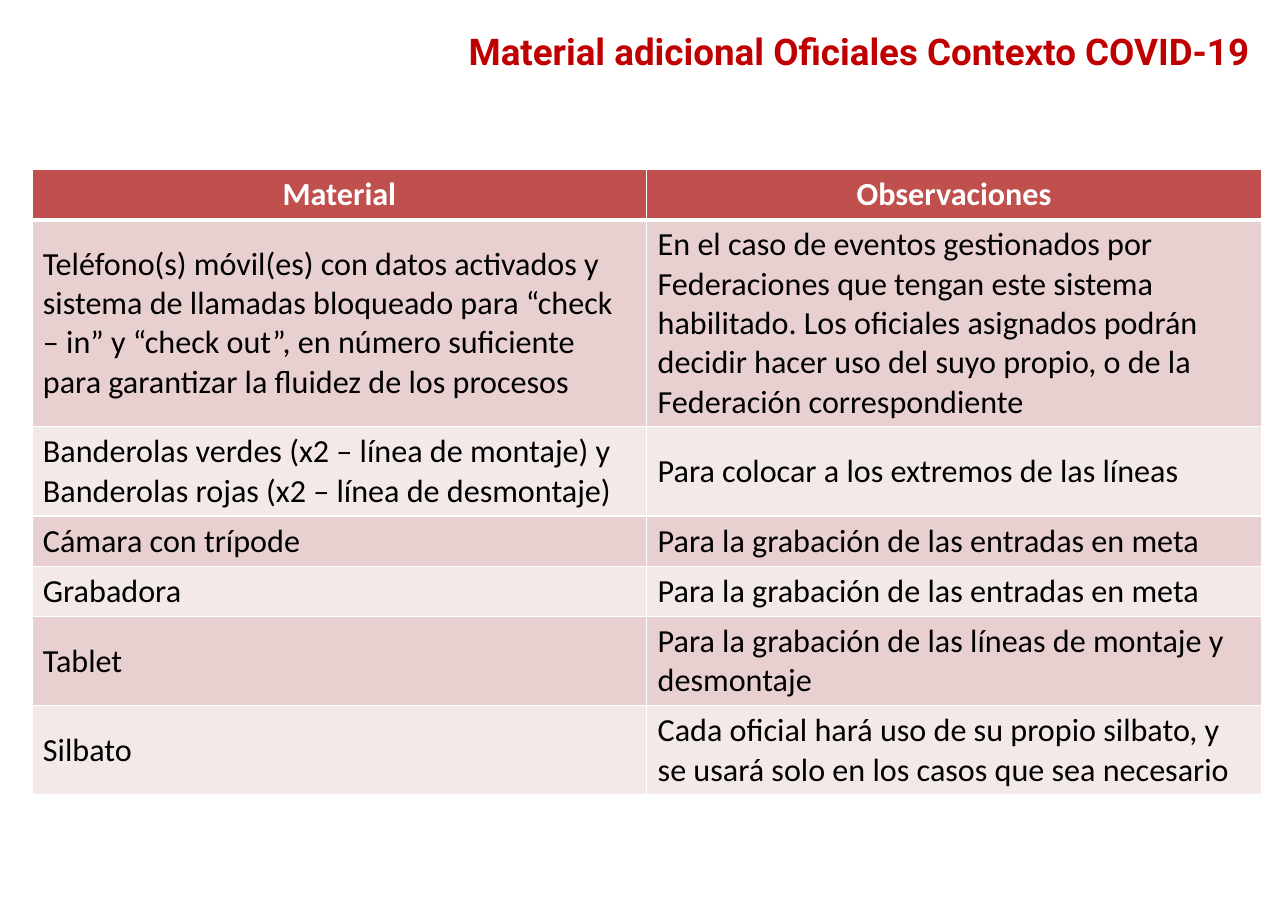
import pptx
import pptx.dml.color
import pptx.enum.text
import pptx.oxml
import pptx.oxml.ns
import pptx.util

COLORS = {
    "title": "C00000",
    "header": "C0504D",
    "band_dark": "E8D0D0",
    "band_light": "F4E9E9",
    "white": "FFFFFF",
    "black": "000000",
}
ALIGN = pptx.enum.text.PP_ALIGN
MIDDLE = pptx.enum.text.MSO_ANCHOR.MIDDLE
LINE_HEIGHT = 4.3
CELL_PADDING = 1.21

HEADINGS = ("Material", "Observaciones")
MATERIALS = [
    (5, "Teléfono(s) móvil(es) con datos activados y sistema de llamadas bloqueado para "
        "“check – in” y “check out”, en número suficiente para garantizar la fluidez de "
        "los procesos",
     "En el caso de eventos gestionados por Federaciones que tengan este sistema "
     "habilitado. Los oficiales asignados podrán decidir hacer uso del suyo propio, o de "
     "la Federación correspondiente"),
    (2, "Banderolas verdes (x2 – línea de montaje) y Banderolas rojas (x2 – línea de desmontaje)",
     "Para colocar a los extremos de las líneas"),
    (1, "Cámara con trípode", "Para la grabación de las entradas en meta"),
    (1, "Grabadora", "Para la grabación de las entradas en meta"),
    (2, "Tablet", "Para la grabación de las líneas de montaje y desmontaje"),
    (2, "Silbato",
     "Cada oficial hará uso de su propio silbato, y se usará solo en los casos que sea necesario"),
]


def rgb(name):
    """Return the named palette colour."""
    return pptx.dml.color.RGBColor.from_string(COLORS[name])


def write_text(text_frame, text, font="Calibri", size=21, color="black", bold=False,
               align=ALIGN.LEFT):
    """Write one formatted paragraph into a text frame."""
    text_frame.word_wrap = True
    paragraph = text_frame.paragraphs[0]
    paragraph.alignment = align
    run = paragraph.add_run()
    run.text = text
    run.font.name = font
    run.font.size = pptx.util.Pt(size)
    run.font.bold = bold
    run.font.color.rgb = rgb(color)


class MaterialSlide:
    """Draw styled elements on one slide, with lengths in percent of its size."""

    def __init__(self, presentation):
        """Add a blank slide to the presentation."""
        self.width = presentation.slide_width
        self.height = presentation.slide_height
        self.slide = presentation.slides.add_slide(presentation.slide_layouts[6])

    def across(self, percent):
        """Convert a percentage of the slide width."""
        return round(self.width * percent / 100)

    def down(self, percent):
        """Convert a percentage of the slide height."""
        return round(self.height * percent / 100)

    def title(self, text, left, top, width, height):
        """Add the right-aligned title."""
        shape = self.slide.shapes.add_textbox(
            self.across(left), self.down(top), self.across(width), self.down(height))
        frame = shape.text_frame
        frame.vertical_anchor = MIDDLE
        frame.margin_left = frame.margin_right = pptx.util.Inches(0.11)
        frame.margin_top = frame.margin_bottom = pptx.util.Inches(0.06)
        write_text(frame, text, font="Roboto", size=24, color="title", bold=True,
                   align=ALIGN.RIGHT)

    def borders(self, cell, top, bottom):
        """Give a cell white borders of the given top and bottom widths."""
        properties = cell._tc.get_or_add_tcPr()
        for index, (side, points) in enumerate(
                (("L", 1), ("R", 1), ("T", top), ("B", bottom))):
            properties.insert(index, pptx.oxml.parse_xml(
                f'<a:ln{side} {pptx.oxml.ns.nsdecls("a")} w="{pptx.util.Pt(points)}">'
                f'<a:solidFill><a:srgbClr val="{COLORS["white"]}"/></a:solidFill>'
                f'</a:ln{side}>'))

    def cell(self, cell, text, fill, top=1, bottom=1, **text_format):
        """Fill, border and write one table cell."""
        cell.vertical_anchor = MIDDLE
        cell.fill.solid()
        cell.fill.fore_color.rgb = rgb(fill)
        self.borders(cell, top, bottom)
        write_text(cell.text_frame, text, **text_format)

    def table(self, headings, rows, left, top, width):
        """Add a banded table whose row heights follow their line counts."""
        line_counts = [1] + [lines for lines, *_ in rows]
        heights = [self.down(lines * LINE_HEIGHT + CELL_PADDING) for lines in line_counts]
        table = self.slide.shapes.add_table(
            len(heights), len(headings), self.across(left), self.down(top),
            self.across(width), sum(heights)).table
        table.horz_banding = False
        for row, height in zip(table.rows, heights):
            row.height = height
        for column, heading in enumerate(headings):
            self.cell(table.cell(0, column), heading, "header", bottom=3,
                      color="white", bold=True, align=ALIGN.CENTER)
        for number, (_, *texts) in enumerate(rows, start=1):
            fill = "band_dark" if number % 2 else "band_light"
            for column, text in enumerate(texts):
                self.cell(table.cell(number, column), text, fill,
                          top=3 if number == 1 else 1)


def main():
    """Build and save the presentation."""
    presentation = pptx.Presentation()
    presentation.slide_width = pptx.util.Inches(11.69)
    presentation.slide_height = pptx.util.Inches(8.27)
    slide = MaterialSlide(presentation)
    slide.title("Material adicional Oficiales Contexto COVID-19",
                left=30.54, top=2.06, width=67.41, height=7.13)
    slide.table(HEADINGS, MATERIALS, left=2.48, top=18.62, width=95.47)
    presentation.save("out.pptx")


if __name__ == "__main__":
    main()
